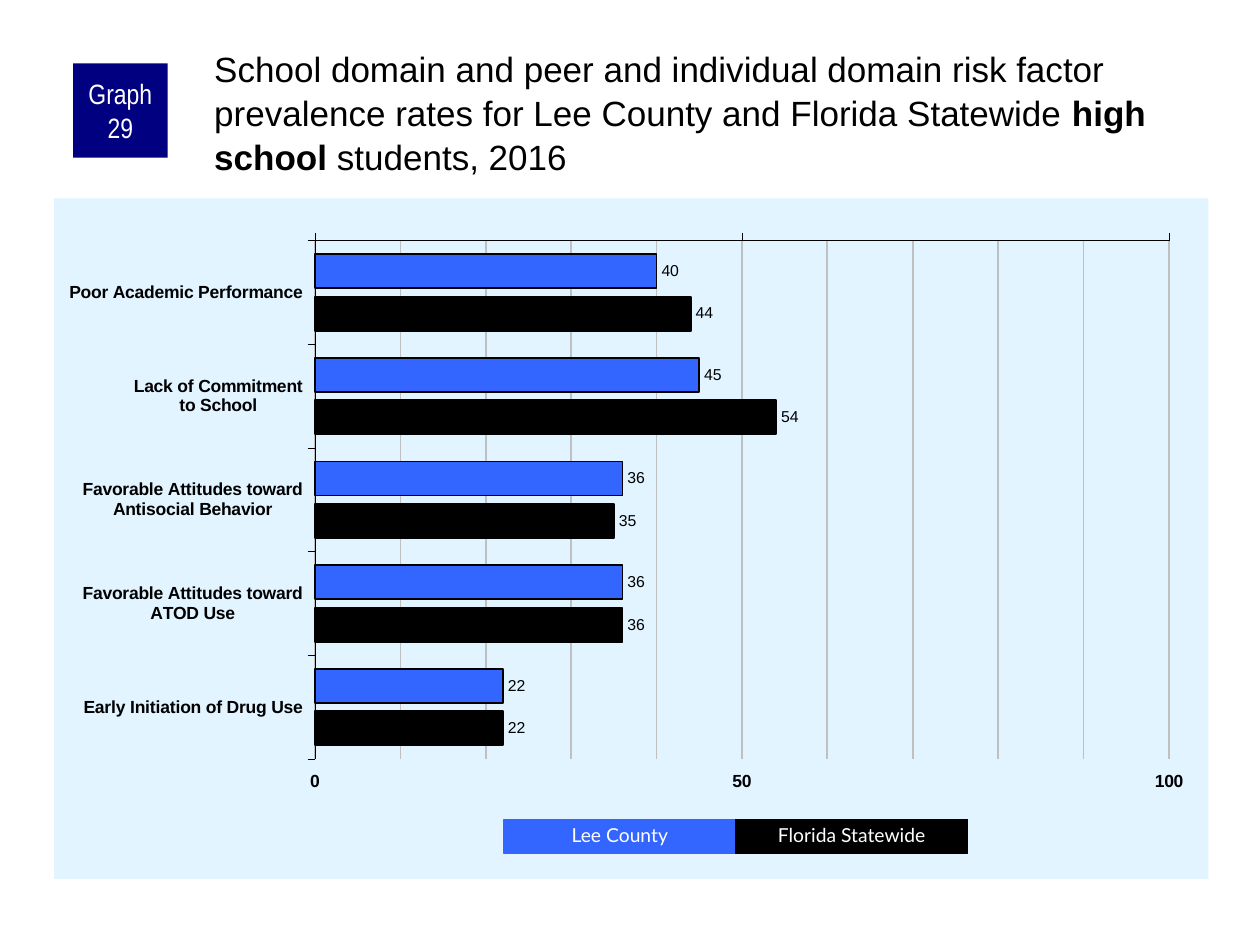
from copy import deepcopy
from lxml import etree
from pptx import Presentation
from pptx.chart.data import CategoryChartData as Data
from pptx.dml.color import RGBColor as RGB
from pptx.enum.chart import XL_CHART_TYPE as Kind, XL_LABEL_POSITION as Spot
from pptx.enum.chart import XL_TICK_LABEL_POSITION as Side, XL_TICK_MARK as Tick
from pptx.enum.shapes import MSO_SHAPE as Form
from pptx.enum.text import MSO_ANCHOR as Anchor, PP_ALIGN as Align
from pptx.oxml import parse_xml
from pptx.oxml.ns import nsdecls, qn
from pptx.util import Inches, Pt

BLACK = RGB(0, 0, 0)
WHITE = RGB(255, 255, 255)
NAVY = RGB(0, 0, 128)
BLUE = RGB(0x33, 0x66, 0xFF)
PALE = RGB(0xE1, 0xF4, 0xFF)
GRAY = RGB(0xC0, 0xC0, 0xC0)
WIDE, HIGH = Inches(10), Inches(7.5)

RATES = [
    ("Poor Academic Performance", 40, 44),
    ("Lack of Commitment\nto School", 45, 54),
    ("Favorable Attitudes toward\nAntisocial Behavior", 36, 35),
    ("Favorable Attitudes toward\nATOD Use", 36, 36),
    ("Early Initiation of Drug Use", 22, 22),
]
AREAS = [("Lee County", BLUE), ("Florida Statewide", BLACK)]
PLOT = {"x": 0.226, "y": 0.062, "w": 0.74, "h": 0.762}


def share(box, x, y, w, h):
    left, top, wide, high = box
    return (round(left + x * wide), round(top + y * high),
            round(w * wide), round(h * high))


def style(item, values):
    for name, value in values.items():
        setattr(item, name, value)


def ink(font, name, size, color, bold=False):
    style(font, {"name": name, "size": Pt(size), "bold": bold})
    font.color.rgb = color


def stroke(line, color, width):
    line.color.rgb = color
    line.width = Pt(width)


def add_tile(slide, box, text, fill, face, size):
    tile = slide.shapes.add_shape(Form.RECTANGLE, *box)
    tile.shadow.inherit = False
    tile.fill.solid()
    tile.fill.fore_color.rgb = fill
    tile.line.fill.background()
    frame = tile.text_frame
    style(frame, {"word_wrap": True, "vertical_anchor": Anchor.MIDDLE})
    para = frame.paragraphs[0]
    para.alignment = Align.CENTER
    run = para.add_run()
    run.text = text
    ink(run.font, face, size, WHITE)
    return tile


def add_badge(slide, box):
    frame = add_tile(slide, box, "Graph 29", NAVY, "Arial Narrow", 16).text_frame
    style(frame, {"margin_left": Inches(0.05), "margin_right": Inches(0.05),
                  "margin_top": 0, "margin_bottom": 0})


def add_title(slide, box):
    title = slide.shapes.title
    style(title, dict(zip(("left", "top", "width", "height"), box)))
    frame = title.text_frame
    style(frame, {"word_wrap": True, "vertical_anchor": Anchor.TOP,
                  "margin_left": Inches(0.03), "margin_top": Inches(0.03),
                  "margin_right": 0, "margin_bottom": 0})
    para = frame.paragraphs[0]
    style(para, {"alignment": Align.LEFT, "line_spacing": 1.05})
    for text, bold in (
        ("School domain and peer and individual domain risk factor prevalence "
         "rates for Lee County and Florida Statewide ", False),
        ("high school", True),
        (" students, 2016", False),
    ):
        run = para.add_run()
        run.text = text
        ink(run.font, "Arial", 20, BLACK, bold)


def set_frame(chart):
    space = chart._chartSpace
    area = space.find(".//" + qn("c:plotArea"))
    old = area.find(qn("c:layout"))
    if old is not None:
        area.remove(old)
    layout = etree.Element(qn("c:layout"))
    manual = etree.SubElement(layout, qn("c:manualLayout"))
    parts = [("layoutTarget", "inner"), ("xMode", "edge"), ("yMode", "edge")]
    for tag, value in parts + list(PLOT.items()):
        etree.SubElement(manual, qn("c:" + tag)).set("val", str(value))
    area.insert(0, layout)
    paint = parse_xml(
        f'<c:spPr {nsdecls("c", "a")}><a:solidFill><a:srgbClr val="{PALE}"/>'
        '</a:solidFill><a:ln><a:noFill/></a:ln></c:spPr>')
    space.find(qn("c:chart")).addnext(paint)


def set_axes(chart):
    cat, val = chart.category_axis, chart.value_axis
    for axis in (cat, val):
        style(axis, {"major_tick_mark": Tick.OUTSIDE, "minor_tick_mark": Tick.NONE})
        ink(axis.tick_labels.font, "Arial", 10, BLACK, True)
        stroke(axis.format.line, BLACK, 0.25)
    cat.reverse_order = True
    style(val, {"minimum_scale": 0, "maximum_scale": 100, "major_unit": 50,
                "minor_unit": 10, "has_major_gridlines": True,
                "has_minor_gridlines": True, "tick_label_position": Side.HIGH})
    stroke(val.major_gridlines.format.line, GRAY, 1)
    root = val._element
    look = root.find(qn("c:majorGridlines")).find(qn("c:spPr"))
    root.find(qn("c:minorGridlines")).append(deepcopy(look))


def add_rates(slide, box):
    data = Data()
    names, *values = zip(*RATES)
    data.categories = names
    for (area, color), rates in zip(AREAS, values):
        data.add_series(area, rates)
    chart = slide.shapes.add_chart(Kind.BAR_CLUSTERED, *box, data).chart
    style(chart, {"has_legend": False, "has_title": False})
    ink(chart.font, "Arial", 11.8, BLACK)
    set_frame(chart)
    set_axes(chart)
    plot = chart.plots[0]
    style(plot, {"gap_width": 80, "overlap": -25, "vary_by_categories": False})
    for series, (area, color) in zip(plot.series, AREAS):
        series.format.fill.solid()
        series.format.fill.fore_color.rgb = color
        stroke(series.format.line, BLACK, 1)
        labels = series.data_labels
        style(labels, {"show_value": True, "position": Spot.OUTSIDE_END})
        ink(labels.font, "Arial", 9, BLACK)


def add_key(slide, box):
    part = 1 / len(AREAS)
    for step, (area, color) in enumerate(AREAS):
        cell = share(box, step * part, 0, part, 1)
        tile = add_tile(slide, cell, area, color, "Lato", 11)
        stroke(tile.line, color, 0.75)
        tile.text_frame.paragraphs[0].line_spacing = 0.9


def main():
    deck = Presentation()
    style(deck, {"slide_width": WIDE, "slide_height": HIGH})
    slide = deck.slides.add_slide(deck.slide_layouts[5])
    page = (0, 0, WIDE, HIGH)
    add_rates(slide, share(page, 0.043, 0.21, 0.916, 0.72))
    add_badge(slide, share(page, 0.058, 0.067, 0.075, 0.1))
    add_title(slide, share(page, 0.167, 0.044, 0.792, 0.11))
    add_key(slide, share(page, 0.4, 0.867, 0.368, 0.036))
    deck.save("out.pptx")


if __name__ == "__main__":
    main()
